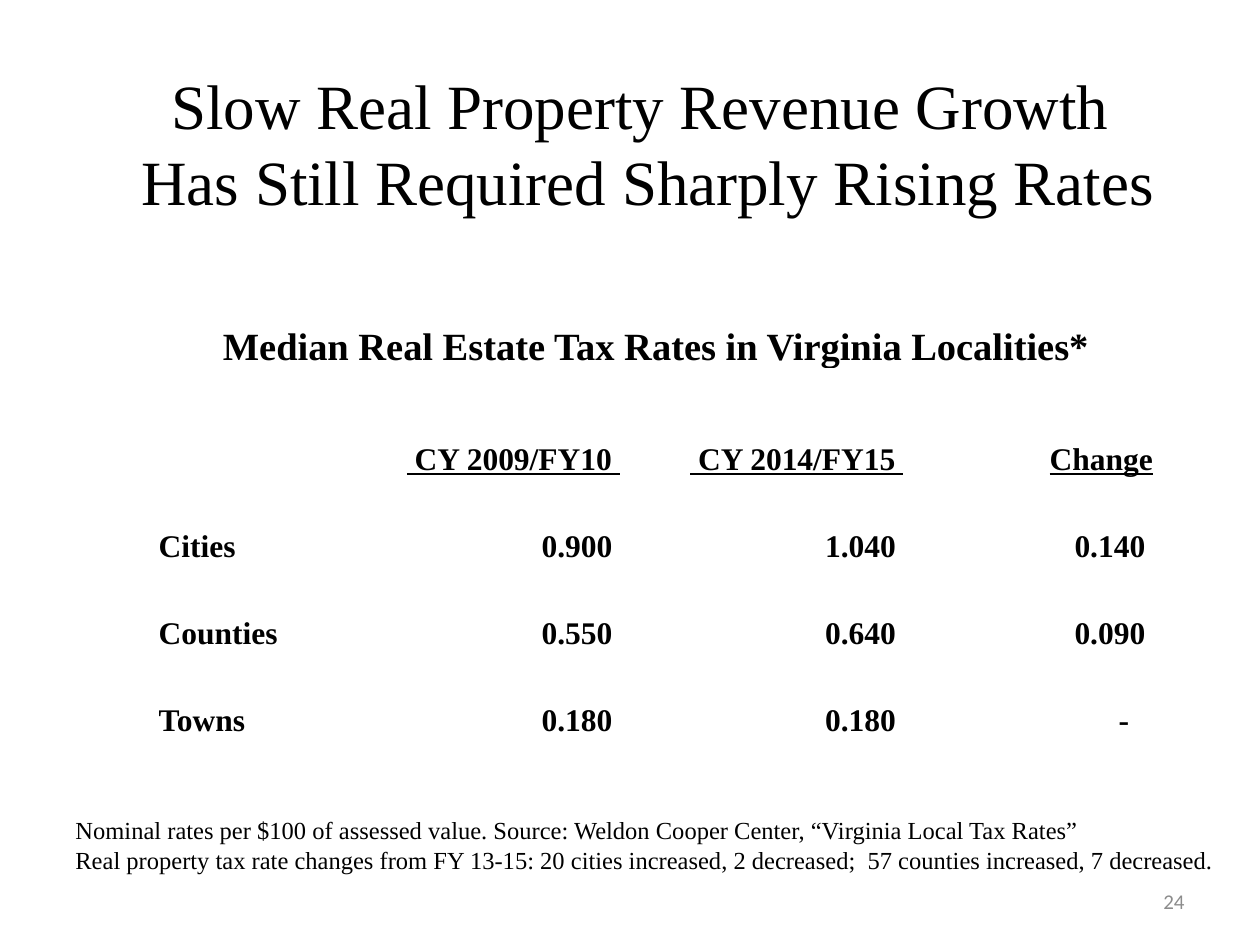
"""Build a slide comparing median real estate tax rates in Virginia localities."""
from dataclasses import dataclass

from pptx import Presentation
from pptx.dml.color import RGBColor
from pptx.enum.text import MSO_ANCHOR, PP_ALIGN
from pptx.util import Inches, Pt

LEFT, CENTER, RIGHT = PP_ALIGN.LEFT, PP_ALIGN.CENTER, PP_ALIGN.RIGHT
TOP, MIDDLE, BOTTOM = MSO_ANCHOR.TOP, MSO_ANCHOR.MIDDLE, MSO_ANCHOR.BOTTOM
BLACK = RGBColor(0x00, 0x00, 0x00)
GRAY = RGBColor(0x8C, 0x8C, 0x8C)
SERIF, SANS = "Times New Roman", "Calibri"
WIDTH, HEIGHT = Inches(10), Inches(7.5)
TITLE_LAYOUT = 5

COLUMN_WIDTHS = (1.43, 2.25, 2.25, 1.98)
ROW_HEIGHTS = (0.93, 0.36, 0.5, 0.69, 0.69, 0.69)
HEADER_ROW = 2
CELL_INSET, NUMBER_INSET, DASH_INSET = 0.01, 0.07, 0.2
TABLE_TITLE = "Median Real Estate Tax Rates in Virginia Localities*"
HEADERS = ("", " CY 2009/FY10 ", " CY 2014/FY15 ", "Change")
RATES = (
    ("Cities", "0.900", "1.040", "0.140"),
    ("Counties", "0.550", "0.640", "0.090"),
    ("Towns", "0.180", "0.180", "-"),
)


@dataclass(frozen=True)
class Style:
    """Look of a paragraph."""

    size: float
    align: PP_ALIGN = LEFT
    bold: bool = False
    underline: bool = False
    font: str = SERIF
    color: RGBColor = BLACK


@dataclass(frozen=True)
class Area:
    """Position and size as shares of the slide."""

    left: float
    top: float
    width: float
    height: float


def write(frame, lines: tuple[str, ...], style: Style) -> None:
    """Fill a text frame with one styled paragraph per line."""
    frame.text = "\n".join(lines)
    for para in frame.paragraphs:
        para.alignment = style.align
        font = para.font
        font.name, font.size = style.font, Pt(style.size)
        font.bold, font.underline = style.bold, style.underline
        font.color.rgb = style.color


def place(box, area: Area) -> None:
    """Move and size a shape within the slide."""
    box.left, box.top = int(WIDTH * area.left), int(HEIGHT * area.top)
    box.width, box.height = int(WIDTH * area.width), int(HEIGHT * area.height)


def add_text(page, area: Area, lines: tuple[str, ...], style: Style,
             anchor: MSO_ANCHOR, wrap: bool = True) -> None:
    """Add a text box."""
    box = page.shapes.add_textbox(0, 0, 0, 0)
    place(box, area)
    box.text_frame.word_wrap = wrap
    box.text_frame.vertical_anchor = anchor
    write(box.text_frame, lines, style)


def fill_cell(cell, text: str, style: Style, right_inset: float = CELL_INSET) -> None:
    """Write one bottom-anchored table cell."""
    cell.fill.background()
    cell.vertical_anchor = BOTTOM
    cell.margin_left = cell.margin_top = Inches(CELL_INSET)
    cell.margin_right, cell.margin_bottom = Inches(right_inset), 0
    write(cell.text_frame, (text,), style)


def add_rate_table(page) -> None:
    """Add the table of tax rates."""
    table = page.shapes.add_table(
        len(ROW_HEIGHTS), len(COLUMN_WIDTHS), Inches(1.25), Inches(2),
        Inches(sum(COLUMN_WIDTHS)), Inches(sum(ROW_HEIGHTS))).table
    table.first_row = table.horz_banding = False
    for column, width in zip(table.columns, COLUMN_WIDTHS):
        column.width = Inches(width)
    for row, height in zip(table.rows, ROW_HEIGHTS):
        row.height = Inches(height)

    blank = ("",) * len(COLUMN_WIDTHS)
    for r, texts in enumerate((blank, blank, HEADERS, *RATES)):
        for c, text in enumerate(texts):
            inset = CELL_INSET
            if r > HEADER_ROW and c:
                inset = DASH_INSET if text == "-" else NUMBER_INSET
            style = Style(18, RIGHT if c else LEFT, True, r == HEADER_ROW)
            fill_cell(table.cell(r, c), text, style, inset)
    heading = table.cell(0, 0)
    heading.merge(table.cell(0, len(COLUMN_WIDTHS) - 1))
    fill_cell(heading, TABLE_TITLE, Style(22, CENTER, True))


def main() -> None:
    """Build and save the deck."""
    deck = Presentation()
    deck.slide_width, deck.slide_height = WIDTH, HEIGHT
    page = deck.slides.add_slide(deck.slide_layouts[TITLE_LAYOUT])

    title = page.shapes.title
    place(title, Area(0.058, 0.067, 0.9, 0.167))
    title.text_frame.vertical_anchor = MIDDLE
    write(title.text_frame, ("Slow Real Property Revenue Growth",
                             " Has Still Required Sharply Rising Rates"),
          Style(36, CENTER))

    add_rate_table(page)
    add_text(page, Area(0.05, 0.856, 0.968, 0.108), (
        "Nominal rates per $100 of assessed value. Source: Weldon Cooper Center, "
        "“Virginia Local Tax Rates”",
        "Real property tax rate changes from FY 13-15: 20 cities increased, "
        "2 decreased;  57 counties increased, 7 decreased.",
    ), Style(14), TOP, wrap=False)
    add_text(page, Area(0.717, 0.927, 0.233, 0.053), ("24",),
             Style(12, RIGHT, font=SANS, color=GRAY), MIDDLE)
    deck.save("out.pptx")


if __name__ == "__main__":
    main()
